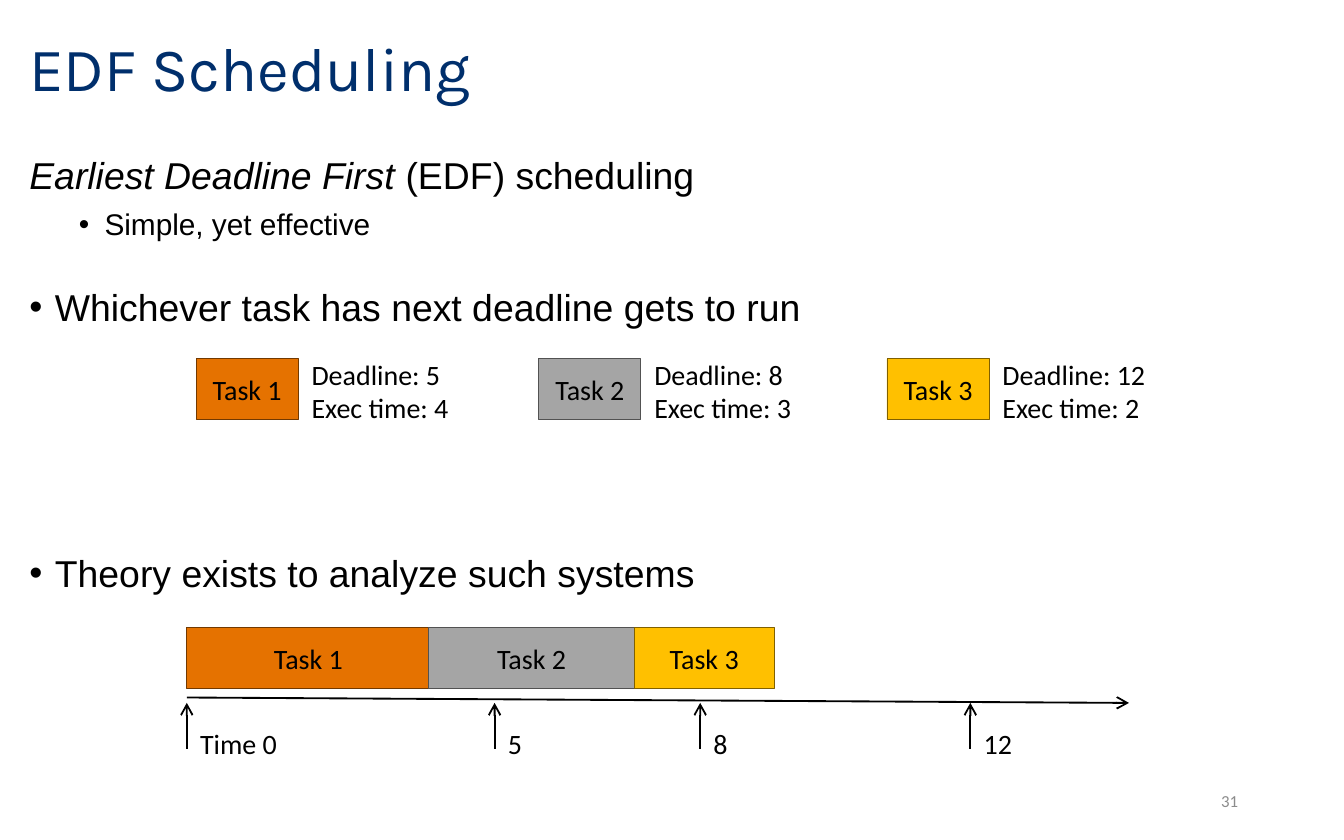
from dataclasses import dataclass

from lxml.etree import SubElement
from pptx import Presentation
from pptx.dml.color import RGBColor
from pptx.enum.shapes import MSO_CONNECTOR as Link, MSO_SHAPE as Shape
from pptx.enum.text import MSO_ANCHOR as Anchor, MSO_AUTO_SIZE as Fit, PP_ALIGN as Align
from pptx.oxml.ns import qn
from pptx.util import Inches, Pt


@dataclass
class Task:
    name: str
    fill: str
    edge: str
    left: float
    due: int
    cost: int
    start: float
    width: float


@dataclass
class Tick:
    text: str
    left: float
    width: float


@dataclass
class Point:
    words: list[str]
    size: int
    gap: float
    indent: float = 0
    bullet: bool = True


TASKS = [
    Task("Task 1", "E57200", "723900", 1.46, 5, 4, 1.39, 1.81),
    Task("Task 2", "A5A5A5", "525252", 4.01, 8, 3, 3.19, 1.53),
    Task("Task 3", "FFC000", "806000", 6.6, 12, 2, 4.72, 1.04),
]
TICKS = [
    Tick("Time 0", 1.39, 0.78),
    Tick("5", 3.68, 0.31),
    Tick("8", 5.21, 0.31),
    Tick("12", 7.22, 0.42),
]
POINTS = [
    Point(["Earliest Deadline First", " (EDF) scheduling"], 20, 0, bullet=False),
    Point(["Simple, yet effective"], 16, 5, 0.56),
    Point(["Whichever task has next deadline gets to run"], 20, 22.5, 0.19),
    Point(["Theory exists to analyze such systems"], 20, 118.5, 0.19),
]
HANG = 0.19
BOX_W, BOX_H = 0.76, 0.45


def paint(fill, color: str) -> None:
    """Make a fill one solid colour."""
    fill.solid()
    fill.fore_color.rgb = RGBColor.from_string(color)


def style(para, size: float, face: str = "Calibri", color: str = "000000") -> None:
    """Set the font of a paragraph."""
    para.font.size, para.font.name = Pt(size), face
    paint(para.font.fill, color)


def frame(slide, left: float, top: float, width: float, height: float):
    """Add a wrapping text box and return its text frame."""
    area = slide.shapes.add_textbox(Inches(left), Inches(top), Inches(width), Inches(height))
    area.text_frame.word_wrap = True
    return area.text_frame


def label(slide, text: str, left: float, top: float, width: float, height: float) -> None:
    """Add a label that fits its text."""
    body = frame(slide, left, top, width, height)
    body.word_wrap, body.auto_size = False, Fit.SHAPE_TO_FIT_TEXT
    para = body.paragraphs[0]
    para.text = text
    style(para, 15)


def block(slide, task: Task, left: float, top: float, width: float) -> None:
    """Draw a named task box."""
    box = slide.shapes.add_shape(Shape.RECTANGLE, Inches(left), Inches(top), Inches(width), Inches(BOX_H))
    box.shadow.inherit = False
    paint(box.fill, task.fill)
    paint(box.line.fill, task.edge)
    box.line.width = Pt(0.5)
    box.text_frame.vertical_anchor = Anchor.MIDDLE
    para = box.text_frame.paragraphs[0]
    para.text, para.alignment = task.name, Align.CENTER
    style(para, 15)


def arrow(slide, x1: float, y1: float, x2: float, y2: float) -> None:
    """Draw a thin black line with an open arrowhead."""
    link = slide.shapes.add_connector(Link.STRAIGHT, Inches(x1), Inches(y1), Inches(x2), Inches(y2))
    paint(link.line.fill, "000000")
    link.line.width = Pt(1)
    props = link._element.spPr
    SubElement(props.find(qn("a:ln")), qn("a:tailEnd"), type="arrow")
    SubElement(props, qn("a:effectLst"))


def write(para, point: Point) -> None:
    """Fill one paragraph of the body text."""
    if point.bullet:
        props = para._p.get_or_add_pPr()
        props.set("marL", str(Inches(point.indent)))
        props.set("indent", str(-Inches(HANG)))
        SubElement(props, qn("a:buFont"), typeface="Arial")
        SubElement(props, qn("a:buChar"), char="•")
    para.space_before = Pt(point.gap)
    for text in point.words:
        para.add_run().text = text
    style(para, point.size, "Arial")


def head(slide) -> None:
    """Add the title, body text and page number."""
    title = frame(slide, 0.12, 0.1, 8.52, 0.86)
    title.vertical_anchor = Anchor.MIDDLE
    para = title.paragraphs[0]
    para.text, para.line_spacing = "EDF Scheduling", 0.9
    style(para, 33, "Karla", "002F6C")

    body = frame(slide, 0.12, 1.05, 9.77, 4.58)
    body.margin_top = Inches(0.08)
    for i, point in enumerate(POINTS):
        write(body.add_paragraph() if i else body.paragraphs[0], point)
    body.paragraphs[0].runs[0].font.italic = True

    page = frame(slide, 7.06, 5.79, 2.25, 0.33)
    page.vertical_anchor = Anchor.MIDDLE
    para = page.paragraphs[0]
    para.text, para.alignment = "31", Align.RIGHT
    style(para, 9, color="8C8C8C")


def main() -> None:
    """Build and save the slide."""
    deck = Presentation()
    deck.slide_width, deck.slide_height = Inches(10), Inches(6.25)
    slide = deck.slides.add_slide(deck.slide_layouts[6])
    head(slide)
    for task in TASKS:
        block(slide, task, task.left, 2.67, BOX_W)
        text = f"Deadline: {task.due}\nExec time: {task.cost}"
        label(slide, text, task.left + BOX_W, 2.61, 1.28 if task.due > 9 else 1.24, 0.61)
        block(slide, task, task.start, 4.67, task.width)
    arrow(slide, 1.39, 5.19, 8.4, 5.23)
    for tick in TICKS:
        arrow(slide, tick.left, 5.57, tick.left, 5.23)
        label(slide, tick.text, tick.left, 5.36, tick.width, 0.35)
    deck.save("out.pptx")


if __name__ == "__main__":
    main()
